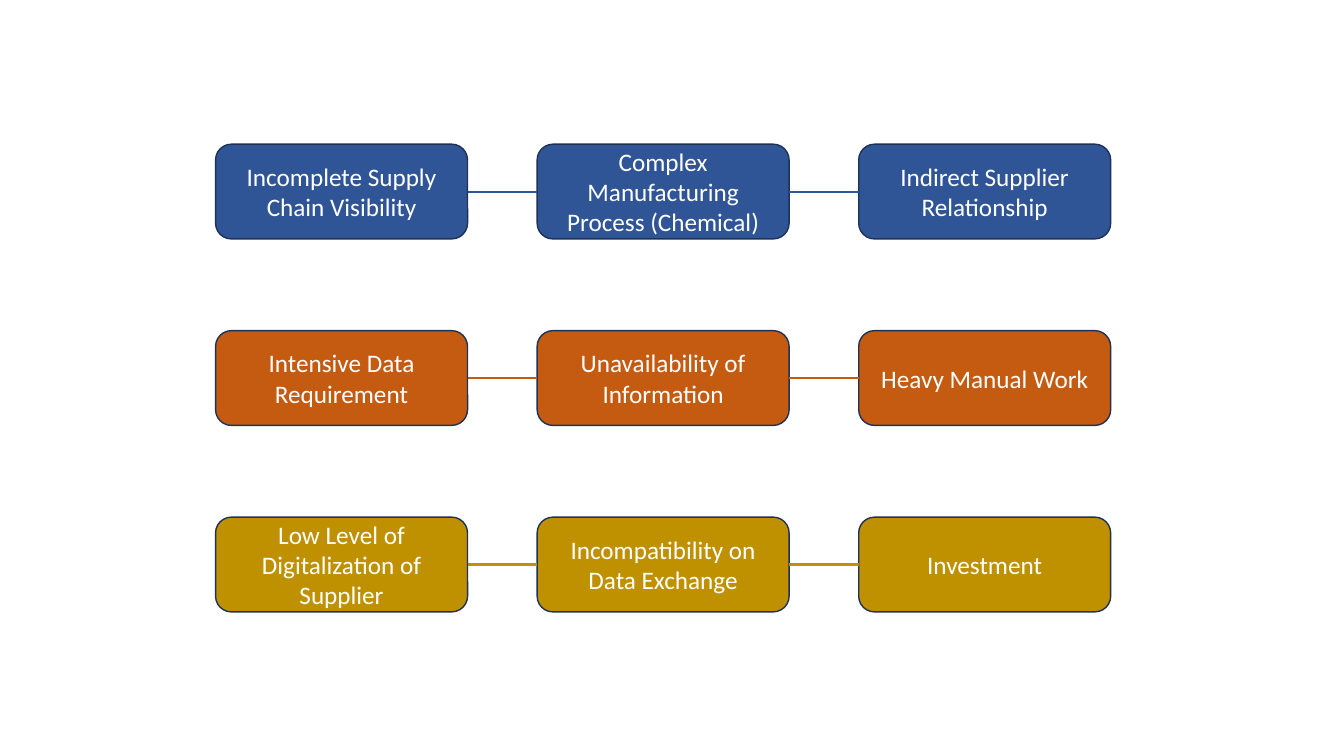
import pptx
import pptx.util
import pptx.dml.color
import pptx.enum.shapes
import pptx.enum.text
import pptx.oxml.ns
import lxml.etree

Pt = pptx.util.Pt

COLORS = {
    "supply": "2F5597",
    "data": "C55A11",
    "readiness": "BF9000",
    "outline": "1E3256",
    "text": "FFFFFF",
}

CHALLENGES = {
    "supply": [
        "Incomplete Supply Chain Visibility",
        "Complex Manufacturing Process (Chemical)",
        "Indirect Supplier Relationship",
    ],
    "data": [
        "Intensive Data Requirement",
        "Unavailability of Information",
        "Heavy Manual Work",
    ],
    "readiness": [
        "Low Level of Digitalization of Supplier",
        "Incompatibility on Data Exchange",
        "Investment",
    ],
}

LEFT, TOP = 154, 103
COLUMN_STEP, ROW_STEP = 229.7, 133.2
BOX_WIDTH, BOX_HEIGHT = 180, 67.7
LEFT_SIDE, RIGHT_SIDE = 1, 3


def rgb(name):
    return pptx.dml.color.RGBColor.from_string(COLORS[name])


def write_text(frame, text, font="Calibri", size=18, color="text"):
    frame.word_wrap = True
    frame.vertical_anchor = pptx.enum.text.MSO_ANCHOR.MIDDLE
    paragraph = frame.paragraphs[0]
    paragraph.alignment = pptx.enum.text.PP_ALIGN.CENTER
    run = paragraph.add_run()
    run.text = text
    run.font.name = font
    run.font.size = Pt(size)
    run.font.color.rgb = rgb(color)


class ChallengeSlide:
    outline_width = 1
    link_width = 1.5

    def __init__(self, slide):
        self.slide = slide

    def box(self, text, left, top, color):
        challenge = self.slide.shapes.add_shape(
            pptx.enum.shapes.MSO_SHAPE.ROUNDED_RECTANGLE,
            Pt(left), Pt(top), Pt(BOX_WIDTH), Pt(BOX_HEIGHT),
        )
        challenge.shadow.inherit = False
        challenge.fill.solid()
        challenge.fill.fore_color.rgb = rgb(color)
        challenge.line.color.rgb = rgb("outline")
        challenge.line.width = Pt(self.outline_width)
        write_text(challenge.text_frame, text)
        return challenge

    def link(self, start, end, color):
        link = self.slide.shapes.add_connector(
            pptx.enum.shapes.MSO_CONNECTOR.STRAIGHT, 0, 0, 0, 0
        )
        link.begin_connect(start, RIGHT_SIDE)
        link.end_connect(end, LEFT_SIDE)
        link.line.color.rgb = rgb(color)
        link.line.width = Pt(self.link_width)
        properties = link._element.spPr
        lxml.etree.SubElement(properties, pptx.oxml.ns.qn("a:effectLst"))


def main():
    presentation = pptx.Presentation()
    presentation.slide_width = Pt(960)
    presentation.slide_height = Pt(540)
    blank_layout = presentation.slide_layouts[6]
    page = ChallengeSlide(presentation.slides.add_slide(blank_layout))

    for row, (theme, labels) in enumerate(CHALLENGES.items()):
        challenges = [
            page.box(label, LEFT + column * COLUMN_STEP, TOP + row * ROW_STEP, theme)
            for column, label in enumerate(labels)
        ]
        for start, end in zip(challenges, challenges[1:]):
            page.link(start, end, theme)

    presentation.save("out.pptx")


if __name__ == "__main__":
    main()
